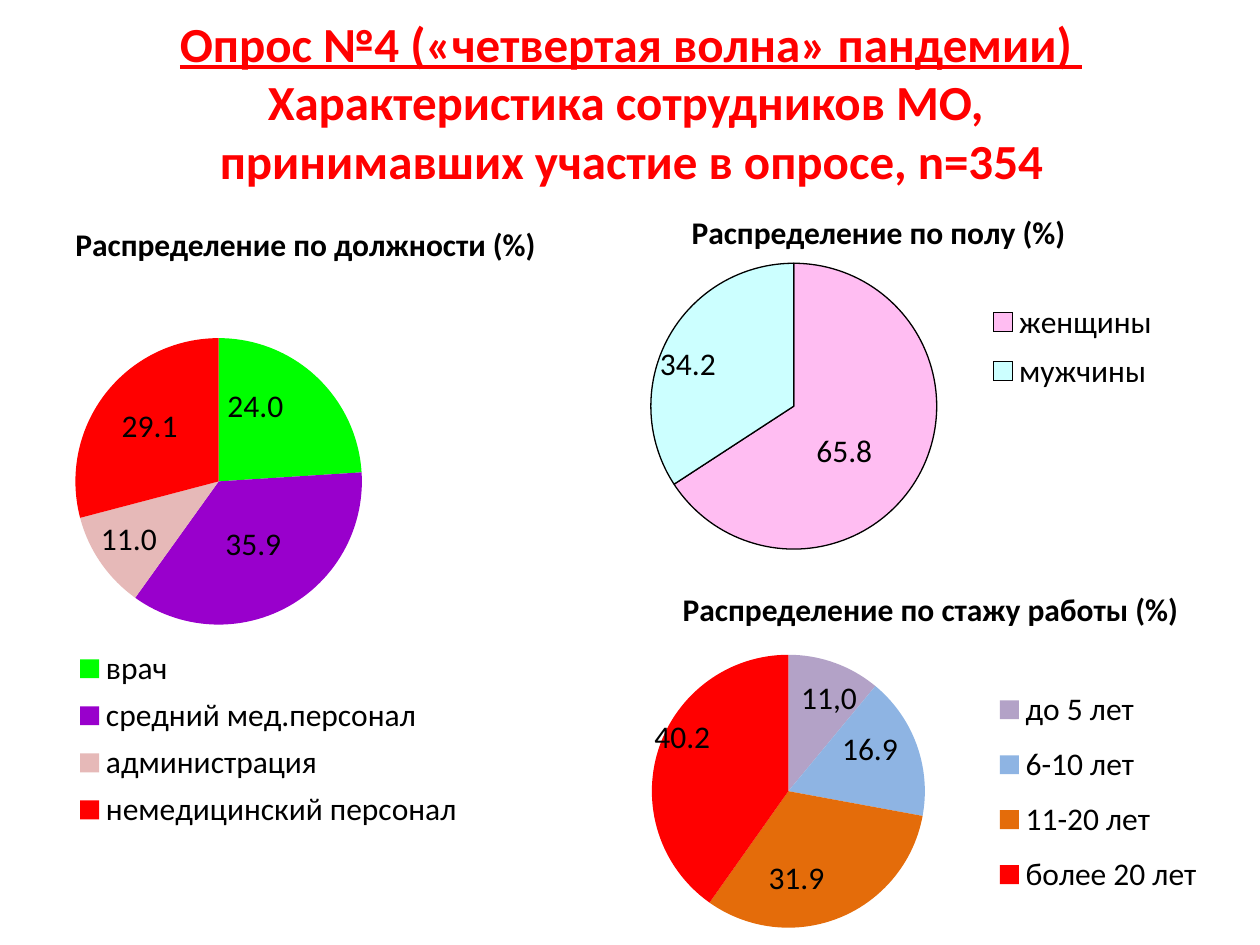
from lxml import etree
from pptx import Presentation
from pptx.chart.data import CategoryChartData
from pptx.dml.color import RGBColor
from pptx.enum.chart import XL_CHART_TYPE, XL_LABEL_POSITION, XL_LEGEND_POSITION
from pptx.enum.text import MSO_ANCHOR, MSO_AUTO_SIZE, PP_ALIGN
from pptx.oxml.ns import qn
from pptx.util import Inches, Pt

PIE = XL_CHART_TYPE.PIE
LABEL_CENTER = XL_LABEL_POSITION.CENTER
LEGEND_BOTTOM = XL_LEGEND_POSITION.BOTTOM
MIDDLE = MSO_ANCHOR.MIDDLE
NO_AUTOFIT = MSO_AUTO_SIZE.NONE
CENTER = PP_ALIGN.CENTER

FONT = "Calibri"
BLACK = RGBColor(0x00, 0x00, 0x00)
RED = RGBColor(0xFF, 0x00, 0x00)
GREEN = RGBColor(0x00, 0xFF, 0x00)
PURPLE = RGBColor(0x99, 0x00, 0xCC)
ROSE = RGBColor(0xE6, 0xB9, 0xB8)
PINK = RGBColor(0xFF, 0xBD, 0xF2)
CYAN = RGBColor(0xCC, 0xFF, 0xFF)
LILAC = RGBColor(0xB3, 0xA2, 0xC7)
BLUE = RGBColor(0x8E, 0xB4, 0xE3)
ORANGE = RGBColor(0xE4, 0x6C, 0x0A)

# Slices: category, value, colour, label shift (fractions of the chart)
POSITION_SLICES = [
    ("врач", 24.0, GREEN, (-0.02, -0.04)),
    ("средний мед.персонал", 35.9, PURPLE, (0, 0)),
    ("администрация", 11.0, ROSE, (-0.05, 0.03)),
    ("немедицинский персонал", 29.1, RED, (-0.02, -0.02)),
]
GENDER_SLICES = [
    ("женщины", 65.8, PINK, (-0.02, 0.03)),
    ("мужчины", 34.2, CYAN, (-0.07, -0.02)),
]
EXPERIENCE_SLICES = [
    ("до 5 лет", 11.0, LILAC, (0.03, -0.06)),
    ("6-10 лет", 16.9, BLUE, (0.03, -0.04)),
    ("11-20 лет", 31.9, ORANGE, (-0.03, 0.05)),
    ("более 20 лет", 40.2, RED, (-0.07, -0.07)),
]


def style_font(font, size=18, color=BLACK, bold=False):
    font.name = FONT
    font.size = Pt(size)
    font.bold = bold
    font.color.rgb = color


def make_layout(**values):
    layout = etree.Element(qn("c:layout"))
    manual = etree.SubElement(layout, qn("c:manualLayout"))
    for name, value in values.items():
        etree.SubElement(manual, qn("c:" + name), val=str(value))
    return layout


def box_layout(x, y, w, h, **target):
    return make_layout(**target, xMode="edge", yMode="edge", x=x, y=y, w=w, h=h)


def set_title(page, first_line, rest):
    title = page.shapes.title
    title.left, title.top = Inches(0.26), Inches(0.18)
    title.width, title.height = Inches(9.5), Inches(1.25)
    frame = title.text_frame
    frame.vertical_anchor = MIDDLE
    frame.auto_size = NO_AUTOFIT
    para = frame.paragraphs[0]
    para.alignment = CENTER
    for text, underline in ((first_line, True), (rest, False)):
        for line in text.split("\n"):
            if para.runs:
                para.add_line_break()
            span = para.add_run()
            span.text = line
            style_font(span.font, 28, RED, True)
            span.font.underline = underline


def add_heading(page, text, left, top, width):
    box = page.shapes.add_textbox(Inches(left), Inches(top), Inches(width), Inches(0.4))
    frame = box.text_frame
    frame.word_wrap = False
    frame.text = text
    style_font(frame.paragraphs[0].runs[0].font, bold=True)


def label_slice(series, index, shift, text):
    label = series.points[index].data_label
    if text:
        label.text_frame.text = text
        style_font(label.text_frame.paragraphs[0].runs[0].font)
    else:
        style_font(label.font)
    label.position = LABEL_CENTER
    # Shift the label and keep one decimal
    element = series.data_labels._element.findall(qn("c:dLbl"))[index]
    element.insert(1, make_layout(x=shift[0], y=shift[1]))
    if not text:
        element.insert(2, etree.Element(qn("c:numFmt"), formatCode="0.0", sourceLinked="0"))


def add_pie(page, slices, frame, plot_box, legend_box, outline=False, label_texts=()):
    data = CategoryChartData()
    data.categories = [item[0] for item in slices]
    data.add_series("Series 1", [item[1] for item in slices])
    chart = page.shapes.add_chart(PIE, *map(Inches, frame), data).chart
    chart.has_title = False
    style_font(chart.font)

    # Legend
    chart.has_legend = True
    legend = chart.legend
    legend.position = LEGEND_BOTTOM
    legend.include_in_layout = False
    style_font(legend.font)
    legend_element = legend._element
    for old in legend_element.findall(qn("c:layout")):
        legend_element.remove(old)
    legend_element.find(qn("c:legendPos")).addnext(box_layout(*legend_box))

    # Plot area
    area = chart._chartSpace.chart.plotArea
    for old in area.findall(qn("c:layout")):
        area.remove(old)
    area.insert(0, box_layout(*plot_box, layoutTarget="inner"))

    # Slices and their labels
    plot = chart.plots[0]
    plot.vary_by_categories = True
    series = plot.series[0]
    labels = series.data_labels
    labels.show_value = True
    labels.number_format = "0.0"
    labels.number_format_is_linked = False
    labels.position = LABEL_CENTER
    style_font(labels.font)
    for index, (_, _, color, shift) in enumerate(slices):
        form = series.points[index].format
        form.fill.solid()
        form.fill.fore_color.rgb = color
        if outline:
            form.line.color.rgb = BLACK
            form.line.width = Pt(0.75)
        else:
            form.line.fill.background()
        label_slice(series, index, shift, dict(label_texts).get(index))


def main():
    deck = Presentation()
    deck.slide_width, deck.slide_height = Inches(10), Inches(7.5)
    page = deck.slides.add_slide(deck.slide_layouts[5])
    set_title(page, "Опрос №4 («четвертая волна» пандемии) ",
              "Характеристика сотрудников МО, \nпринимавших участие в опросе, n=354")

    # Distribution by position
    add_heading(page, "Распределение по должности (%)", 0.5, 1.74, 9)
    add_pie(page, POSITION_SLICES, (0.13, 2.27, 4.88, 4.47),
            (0.096, 0.026, 0.466, 0.642), (0.08, 0.63, 0.66, 0.35))

    # Distribution by gender
    add_pie(page, GENDER_SLICES, (5, 1.9, 4.88, 2.98),
            (0.034, 0.063, 0.465, 0.763), (0.56, 0.14, 0.32, 0.29), outline=True)
    add_heading(page, "Распределение по полу (%)", 5.39, 1.64, 3.19)

    # Distribution by length of service
    add_pie(page, EXPERIENCE_SLICES, (5.16, 4.22, 4.65, 3.76),
            (0.003, 0.227, 0.466, 0.642), (0.59, 0.3, 0.35, 0.5),
            label_texts=[(0, "11,0")])
    add_heading(page, "Распределение по стажу работы (%)", 5.32, 4.63, 4.17)

    deck.save("out.pptx")


if __name__ == "__main__":
    main()
